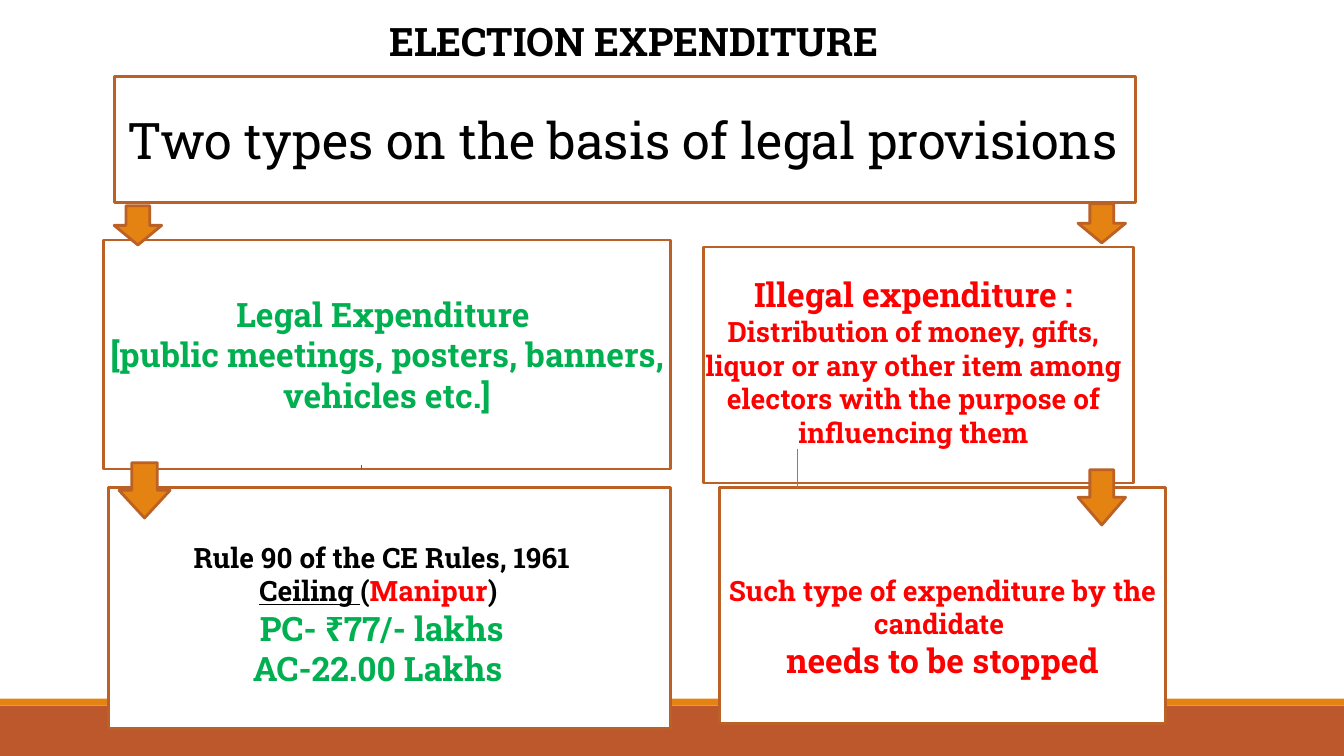
from lxml import etree
from pptx import Presentation
from pptx.dml.color import RGBColor
from pptx.enum import shapes, text
from pptx.oxml.ns import qn
from pptx.util import Pt

FONT = "Roboto Slab"
BLACK, WHITE, RED, GREEN = "000000", "FFFFFF", "FF0000", "00B050"
ORANGE, RUST, EDGE = "E48312", "BD582C", "BB6126"


def color(fmt, value):
    if hasattr(fmt, "solid"):
        fmt.solid()
        fmt.fore_color.rgb = RGBColor.from_string(value)
    else:
        fmt.color.rgb = RGBColor.from_string(value)


def write(sp, paragraphs, insets, align=text.PP_ALIGN.CENTER):
    tf = sp.text_frame
    tf.word_wrap = True
    tf.auto_size = text.MSO_AUTO_SIZE.NONE
    tf.vertical_anchor = text.MSO_ANCHOR.MIDDLE
    tf.margin_left, tf.margin_top, tf.margin_right, tf.margin_bottom = map(Pt, insets)
    for i, runs in enumerate(paragraphs):
        p = tf.add_paragraph() if i else tf.paragraphs[0]
        p.alignment = align
        for words, size, ink, bold, underline in runs:
            r = p.add_run()
            r.text = words
            r.font.name = FONT
            r.font.size = Pt(size)
            r.font.bold = bold
            r.font.underline = underline
            color(r.font, ink)


def bold(words, size, ink, underline=False):
    return words, size, ink, True, underline


def add_block(s, kind, box, fill, edge=None):
    sp = s.shapes.add_shape(kind, *map(Pt, box))
    sp.shadow.inherit = False
    color(sp.fill, fill)
    if edge:
        color(sp.line, edge)
        sp.line.width = Pt(2)
    else:
        sp.line.fill.background()
    return sp


def add_panel(s, box, paragraphs, insets, align=text.PP_ALIGN.CENTER):
    sp = add_block(s, shapes.MSO_SHAPE.RECTANGLE, box, WHITE, EDGE)
    write(sp, paragraphs, insets, align)


def add_arrow(s, box):
    sp = add_block(s, shapes.MSO_SHAPE.DOWN_ARROW, box, ORANGE, EDGE)
    width, height = box[2:]
    sp.adjustments[1] = height / 2 / min(width, height)


def add_tick(s, x, top, bottom, ink):
    c = s.shapes.add_connector(shapes.MSO_CONNECTOR.STRAIGHT,
                               Pt(x), Pt(top), Pt(x), Pt(bottom))
    color(c.line, ink)
    c.line.width = Pt(0.75)
    etree.SubElement(c._element.spPr, qn("a:effectLst"))


def add_footer(s, box):
    x, y, width, height = box
    rect = shapes.MSO_SHAPE.RECTANGLE
    add_block(s, rect, (x, y + 5, width, height - 5), RUST)
    add_block(s, rect, (x, y, width, 5), ORANGE)


def add_title(s, box):
    sp = s.shapes.title
    sp.left, sp.top, sp.width, sp.height = map(Pt, box)
    write(sp, [[bold("ELECTION EXPENDITURE", 28, BLACK)]], (64, 4, 0, 0))


def add_legal(s, box):
    x, y, width, height = box
    add_panel(s, (x, y, width, 163.5), [
        [bold("Legal Expenditure ", 24, GREEN)],
        [bold("[public meetings, posters, banners, vehicles etc.]", 24, GREEN)],
    ], (3.6, 3.6, 3.6, 3.6))
    add_panel(s, (x + 3.5, y + 176.5, width - 3.5, height - 176.5), [
        [bold("Rule 90 of the CE Rules, 1961", 20, BLACK)],
        [bold("Ceiling ", 20, BLACK, True), bold("(", 20, BLACK),
         bold("Manipur", 20, RED), bold(") ", 20, BLACK)],
        [bold("PC- ₹77/- lakhs", 24, GREEN)],
        [bold("AC-22.00 Lakhs ", 24, GREEN)],
    ], (0, 9, 11, 0))


def add_illegal(s, box):
    x, y, width, height = box
    add_panel(s, (x, y, width - 23, 168.5), [
        [bold("Illegal expenditure : ", 24, RED),
         bold("Distribution of money, gifts, liquor or any other item among "
              "electors with the purpose of influencing them", 20, RED)],
    ], (0, 0, 7.2, 5))
    add_panel(s, (x + 11.5, y + 172, width - 11.5, height - 172), [
        [bold("Such type of expenditure by the candidate ", 20, RED)],
        [bold("needs to be stopped", 24, RED)],
    ], (3.6, 30, 3.6, 0))


def main():
    prs = Presentation()
    prs.slide_width, prs.slide_height = Pt(960), Pt(540)
    s = prs.slides.add_slide(prs.slide_layouts[5])
    add_footer(s, (0, 499, 960, 41))
    add_title(s, (168, 2, 505, 50))
    add_legal(s, (74, 171.5, 405, 349))
    add_illegal(s, (502.5, 176.5, 330, 340.5))
    add_panel(s, (82, 54.5, 729, 90),
              [[("Two types on the basis of legal provisions", 36, BLACK, False, False)]],
              (9, 3.6, 0, 3.6), text.PP_ALIGN.LEFT)
    add_tick(s, 258.5, 332.5, 335, "505188")
    add_tick(s, 569.5, 320.5, 348.5, "808080")
    for box in [(85, 330.5, 36.5, 39.5), (770, 335.5, 34, 39.5),
                (81.5, 147, 34, 28), (770, 145.5, 34, 28)]:
        add_arrow(s, box)
    prs.save("out.pptx")


if __name__ == "__main__":
    main()
